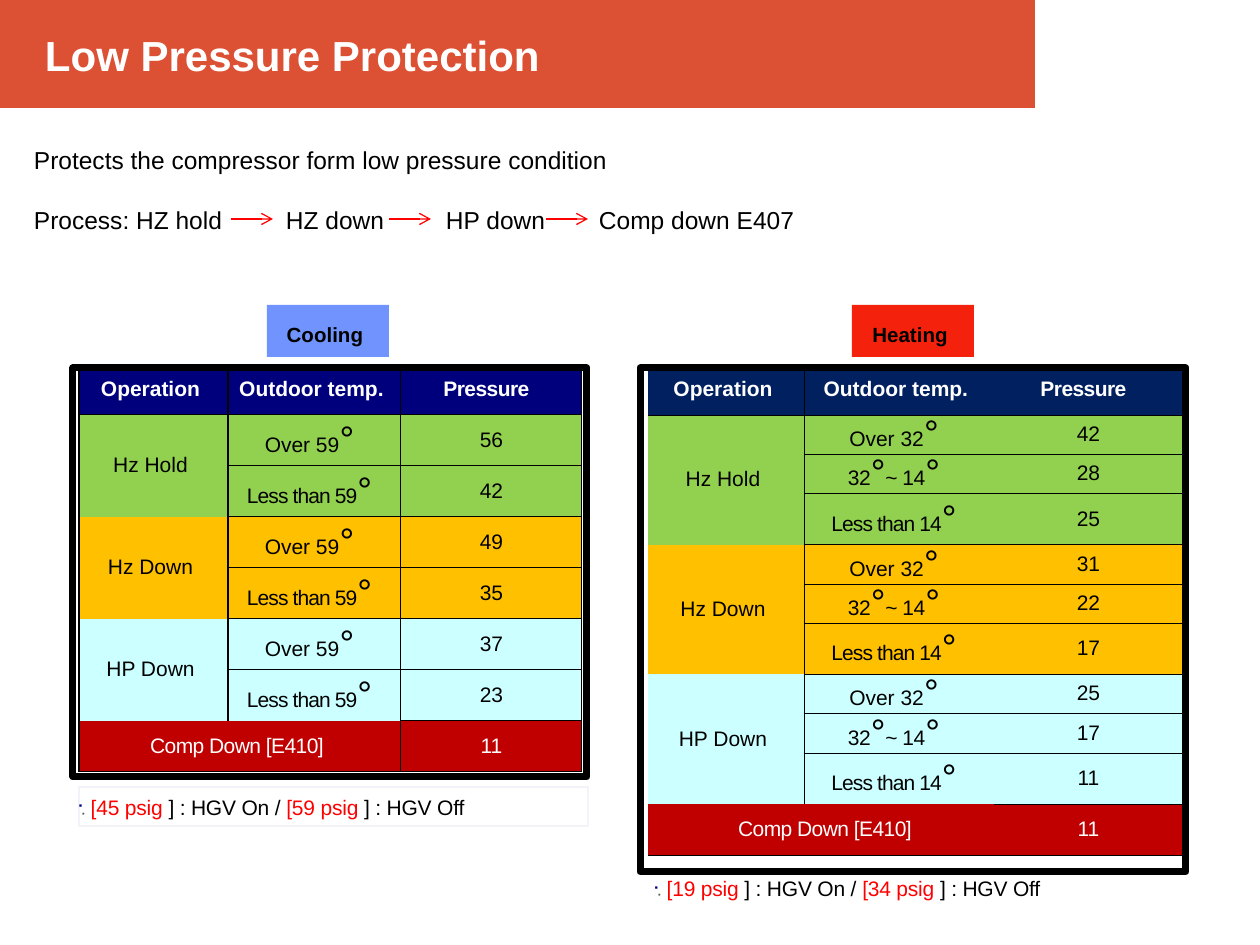
from dataclasses import dataclass
from itertools import groupby

from lxml import etree
from pptx import Presentation
from pptx.dml.color import RGBColor
from pptx.enum.shapes import MSO_CONNECTOR, MSO_SHAPE
from pptx.enum.text import MSO_ANCHOR, PP_ALIGN
from pptx.oxml.ns import qn
from pptx.util import Emu, Pt

RECTANGLE = MSO_SHAPE.RECTANGLE
STRAIGHT = MSO_CONNECTOR.STRAIGHT
TOP, MIDDLE = MSO_ANCHOR.TOP, MSO_ANCHOR.MIDDLE
CENTER, RIGHT = PP_ALIGN.CENTER, PP_ALIGN.RIGHT
EMU_PER_PX = 914400 / 126


@dataclass(frozen=True)
class Theme:
    font: str = "Arial"
    band: str = "DC5034"
    black: str = "000000"
    white: str = "FFFFFF"
    red: str = "FF0000"
    bullet: str = "00007D"
    note_line: str = "F2F3F9"
    hold: str = "92D050"
    down: str = "FFC000"
    pump: str = "CCFFFF"
    stop: str = "C00000"
    title_size: float = 24
    body_size: float = 14
    table_size: float = 12
    label_size: float = 11.7
    degree_size: float = 21
    mark_size: float = 3


THEME = Theme()


@dataclass(frozen=True)
class Box:
    left: int
    top: int
    width: int
    height: int

    def emu(self) -> tuple[Emu, ...]:
        return tuple(px(n) for n in (self.left, self.top, self.width, self.height))


@dataclass(frozen=True)
class Group:
    name: str
    color: str
    readings: tuple[tuple[str, str], ...]


@dataclass(frozen=True)
class Edges:
    header: tuple[str, str, str]
    operation: str
    readings: tuple[str, str]
    stop: tuple[str, str]
    width: float


@dataclass(frozen=True)
class Mode:
    name: str
    label: Box
    label_color: str
    table: Box
    frame: Box
    header_color: str
    columns: tuple[int, int, int]
    row_heights: tuple[int, ...]
    groups: tuple[Group, ...]
    edges: Edges
    stop_align: PP_ALIGN
    stop_margin: int
    note: Box
    note_margin: int
    note_spacing: float
    on: str
    off: str


def px(value: int) -> Emu:
    return Emu(round(value * EMU_PER_PX))


def rgb(color: str) -> RGBColor:
    return RGBColor.from_string(color)


def style(font, size: float, color: str, bold: bool = False) -> None:
    font.name, font.size, font.bold = THEME.font, Pt(size), bold
    font.color.rgb = rgb(color)


def margins(target, left: int, top: int, right: int, bottom: int) -> None:
    target.margin_left, target.margin_top = px(left), px(top)
    target.margin_right, target.margin_bottom = px(right), px(bottom)


def add_rectangle(slide, box: Box, fill: str = "", line: str = "", width: float = 0):
    shape = slide.shapes.add_shape(RECTANGLE, *box.emu())
    shape.shadow.inherit = False
    if fill:
        shape.fill.solid()
        shape.fill.fore_color.rgb = rgb(fill)
    else:
        shape.fill.background()
    if line:
        shape.line.color.rgb = rgb(line)
        shape.line.width = Pt(width)
    else:
        shape.line.fill.background()
    return shape


def add_text(slide, box: Box, lines: list[str], size: float, color: str,
             left: int, bold: bool = False):
    text_frame = slide.shapes.add_textbox(*box.emu()).text_frame
    text_frame.word_wrap = True
    margins(text_frame, left, 9, 13, 6)
    text_frame.text = "\n".join(lines)
    return text_frame, [style(p.font, size, color, bold) for p in text_frame.paragraphs]


def add_arrow(slide, left: int, top: int, length: int) -> None:
    arrow = slide.shapes.add_connector(STRAIGHT, px(left), px(top), px(left + length), px(top))
    arrow.line.color.rgb = rgb(THEME.red)
    arrow.line.width = Pt(0.75)
    etree.SubElement(arrow.line._ln, qn("a:tailEnd"), type="arrow")
    etree.SubElement(arrow._element.spPr, qn("a:effectLst"))


def paint_cell(cell, color: str, edges: str, width: float) -> None:
    properties = cell._tc.get_or_add_tcPr()
    for side in "LRTB":
        line = etree.SubElement(properties, qn(f"a:ln{side}"), w=str(Pt(width)))
        if side in edges:
            fill = etree.SubElement(line, qn("a:solidFill"))
            etree.SubElement(fill, qn("a:srgbClr"), val=THEME.black)
        else:
            etree.SubElement(line, qn("a:noFill"))
    cell.fill.solid()
    cell.fill.fore_color.rgb = rgb(color)


def write_cell(cell, text: str, color: str = THEME.black, bold: bool = False,
               spacing: int = 0, right: int = 0, align: PP_ALIGN = CENTER) -> None:
    cell.vertical_anchor = MIDDLE
    margins(cell, 0, 0, right, 0)
    paragraph = cell.text_frame.paragraphs[0]
    paragraph.alignment, paragraph.line_spacing = align, 0.96
    for is_degree, letters in groupby(text, lambda letter: letter == "°"):
        run = paragraph.add_run()
        run.text = "".join(letters)
        style(run.font, THEME.degree_size if is_degree else THEME.table_size, color, bold)
        run.font._element.set("spc", str(spacing))


def add_mode_table(slide, mode: Mode) -> None:
    edges = mode.edges
    table = slide.shapes.add_table(len(mode.row_heights), 3, *mode.table.emu()).table
    for column, width in zip(table.columns, mode.columns):
        column.width = px(width)
    for row, height in zip(table.rows, mode.row_heights):
        row.height = px(height)
    for column, text in enumerate(("Operation", "Outdoor temp.", "Pressure")):
        cell = table.cell(0, column)
        paint_cell(cell, mode.header_color, edges.header[column], edges.width)
        write_cell(cell, text, THEME.white, True, -30 if column == 2 else 0, 10 if column == 2 else 6)
    row = 1
    for group in mode.groups:
        first = row
        for temperature, pressure in group.readings:
            top = "T" if row == 1 else ""
            paint_cell(table.cell(row, 0), group.color, edges.operation + top, edges.width)
            for column, text in enumerate((temperature, pressure), 1):
                paint_cell(table.cell(row, column), group.color, edges.readings[column - 1], edges.width)
            spacing = -50 if "Less" in temperature else -30 if "~" in temperature else 0
            write_cell(table.cell(row, 1), temperature, spacing=spacing, right=10)
            write_cell(table.cell(row, 2), pressure)
            row += 1
        table.cell(first, 0).merge(table.cell(row - 1, 0))
        write_cell(table.cell(first, 0), group.name, right=6)
    for column in range(3):
        paint_cell(table.cell(row, column), THEME.stop, edges.stop[column // 2], edges.width)
    table.cell(row, 0).merge(table.cell(row, 1))
    write_cell(table.cell(row, 0), "Comp Down [E410]", THEME.white, spacing=-30,
               right=mode.stop_margin, align=mode.stop_align)
    write_cell(table.cell(row, 2), "11", THEME.white)


def write_note(shape, mode: Mode) -> None:
    text_frame = shape.text_frame
    text_frame.word_wrap, text_frame.vertical_anchor = True, TOP
    margins(text_frame, 0, mode.note_margin, 0, 0)
    paragraph = text_frame.paragraphs[0]
    paragraph.alignment = PP_ALIGN.LEFT
    paragraph.line_spacing = mode.note_spacing
    properties = paragraph._p.get_or_add_pPr()
    color = etree.SubElement(properties, qn("a:buClr"))
    etree.SubElement(color, qn("a:srgbClr"), val=THEME.bullet)
    etree.SubElement(properties, qn("a:buSzPct"), val="75000")
    etree.SubElement(properties, qn("a:buChar"), char="■")
    for text, size, tint in (("※", THEME.mark_size, THEME.black),
                             (f" [{mode.on} psig", THEME.table_size, THEME.red),
                             (" ] : HGV On /", THEME.table_size, THEME.black),
                             (f" [{mode.off} psig", THEME.table_size, THEME.red),
                             (" ] : HGV Off", THEME.table_size, THEME.black)):
        run = paragraph.add_run()
        run.text = text
        style(run.font, size, tint)
        run.font._element.set("spc", "-10")


def add_label(slide, mode: Mode) -> None:
    text_frame = add_rectangle(slide, mode.label, mode.label_color).text_frame
    text_frame.vertical_anchor = TOP
    margins(text_frame, 0, 19, 6, 0)
    text_frame.text = mode.name
    paragraph = text_frame.paragraphs[0]
    paragraph.alignment, paragraph.line_spacing = CENTER, 0.96
    style(paragraph.runs[0].font, THEME.label_size, THEME.black, True)


def make_groups(temperatures: tuple[str, ...], *pressures: tuple[str, ...]) -> tuple[Group, ...]:
    names = ("Hz Hold", "Hz Down", "HP Down")
    colors = (THEME.hold, THEME.down, THEME.pump)
    return tuple(Group(name, color, tuple(zip(temperatures, values)))
                 for name, color, values in zip(names, colors, pressures))


COOLING = Mode(
    "Cooling", Box(267, 305, 122, 52), "7093FE", Box(79, 365, 503, 407), Box(73, 368, 514, 409),
    "00007D", (149, 173, 181), (50,) + (51,) * 7,
    make_groups(("Over 59°", "Less than 59°"), ("56", "42"), ("49", "35"), ("37", "23")),
    Edges(("LRTB",) * 3, "LR", ("LRTB",) * 2, ("LRB", "LRTB"), 0.7), CENTER, 6,
    Box(79, 787, 509, 39), 6, 1.06, "45", "59")
HEATING = Mode(
    "Heating", Box(852, 305, 122, 52), "F4220C", Box(648, 365, 535, 488), Box(640, 368, 546, 504),
    "002060", (156, 190, 189), (50,) + (39, 39, 51) * 3 + (51,),
    make_groups(("Over 32°", "32°~ 14°", "Less than 14°"),
                ("42", "28", "25"), ("31", "22", "17"), ("25", "17", "11")),
    Edges(("RTB", "LTB", "TB"), "R", ("LTB", "TB"), ("B", "TB"), 0.5), RIGHT, 82,
    Box(655, 877, 476, 26), 0, 0.96, "19", "34")


def main() -> None:
    presentation = Presentation()
    presentation.slide_width, presentation.slide_height = px(1260), px(945)
    slide = presentation.slides.add_slide(presentation.slide_layouts[6])
    add_rectangle(slide, Box(0, 0, 1035, 108), THEME.band)
    for mode in (COOLING, HEATING):
        add_mode_table(slide, mode)
        add_rectangle(slide, mode.frame, line=THEME.black, width=4)
        add_label(slide, mode)
    write_note(add_rectangle(slide, COOLING.note, line=THEME.note_line, width=0.7), COOLING)
    write_note(slide.shapes.add_textbox(*HEATING.note.emu()), HEATING)
    add_text(slide, Box(21, 21, 987, 63), ["Low Pressure Protection"],
             THEME.title_size, THEME.white, 24, True)
    text_frame, _ = add_text(
        slide, Box(21, 136, 1110, 102),
        ["Protects the compressor form low pressure condition",
         "Process: HZ hold\tHZ down\tHP down\tComp down E407"],
        THEME.body_size, THEME.black, 13)
    process = text_frame.paragraphs[1]
    process.space_before = Pt(17.5)
    tabs = etree.Element(qn("a:tabLst"))
    for position in (252, 412, 565):
        etree.SubElement(tabs, qn("a:tab"), pos=str(px(position)), algn="l")
    process._p.pPr.find(qn("a:defRPr")).addprevious(tabs)
    for left in (231, 389, 546):
        add_arrow(slide, left, 219, 42)
    presentation.save("out.pptx")


if __name__ == "__main__":
    main()
